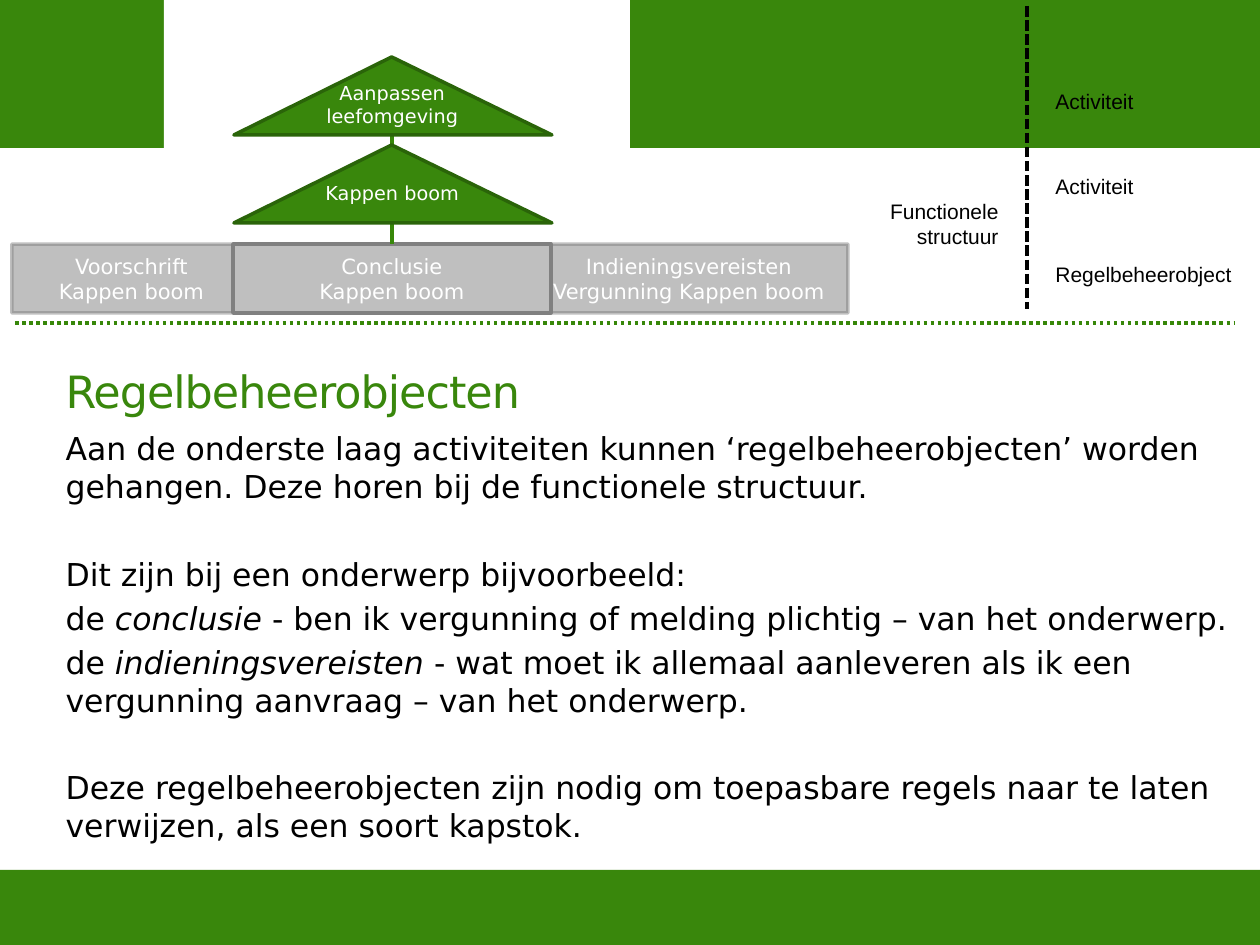
from lxml import etree
from pptx import Presentation
from pptx import util as u
from pptx.dml.color import RGBColor
from pptx.enum import dml, shapes, text
from pptx.oxml.ns import qn

GREEN = RGBColor(0x39, 0x87, 0x0C)
LINE_GREEN = RGBColor(0x37, 0x87, 0x09)
DARK_GREEN = RGBColor(0x2A, 0x64, 0x09)
LIGHT_GREY = RGBColor(0xBF, 0xBF, 0xBF)
GREY = RGBColor(0x80, 0x80, 0x80)
WHITE = RGBColor(0xFF, 0xFF, 0xFF)
BLACK = RGBColor(0, 0, 0)

SANS, ARIAL = "DejaVu Sans", "Arial"
ALIGN, ANCHOR = text.PP_ALIGN, text.MSO_ANCHOR
KINDS = shapes.MSO_SHAPE

BODY = [  # space before in points, then (words, italic) runs
    (0, [("Aan de onderste laag activiteiten kunnen ‘regelbeheerobjecten’ worden "
          "gehangen. Deze horen bij de functionele structuur.", False)]),
    (28.5, [("Dit zijn bij een onderwerp bijvoorbeeld:", False)]),
    (3.6, [("de ", False), ("conclusie", True),
           (" - ben ik vergunning of melding plichtig – van het onderwerp.", False)]),
    (3.6, [("de ", False), ("indieningsvereisten", True),
           (" - wat moet ik allemaal aanleveren als ik een vergunning aanvraag"
            " – van het onderwerp.", False)]),
    (28.5, [("Deze regelbeheerobjecten zijn nodig om toepasbare regels naar te laten "
             "verwijzen, als een soort kapstok.", False)]),
]


def px(count):
    return u.Emu(round(count * 914400 / 126))


def place(box, left, top, width, height):
    box.left, box.top, box.width, box.height = map(px, (left, top, width, height))


def add_span(para, words, size, color, font=SANS, italic=False):
    span = para.add_run()
    span.text = words
    span.font.name, span.font.size = font, u.Pt(size)
    span.font.color.rgb = color
    span.font.italic = italic
    return span


def add_lines(frame, lines, size, color, font=SANS, align=ALIGN.LEFT):
    for index, words in enumerate(lines):
        para = frame.paragraphs[0] if index == 0 else frame.add_paragraph()
        para.alignment = align
        add_span(para, words, size, color, font)


def add_block(page, kind, area, fill, line=None, opacity=100):
    box = page.shapes.add_shape(kind, *map(px, area))
    box.shadow.inherit = False
    box.fill.solid()
    box.fill.fore_color.rgb = fill
    if line is None:
        box.line.fill.background()
        return box
    box.line.color.rgb = line
    box.line.width = u.Pt(2)
    if opacity < 100:
        color = box.line._ln.find(".//" + qn("a:srgbClr"))
        etree.SubElement(color, qn("a:alpha")).set("val", str(opacity * 1000))
    return box


def add_object(page, left, width, lines, opacity):
    box = add_block(page, KINDS.RECTANGLE, (left, 244, width, 69), LIGHT_GREY, GREY, opacity)
    box.text_frame.word_wrap = True
    box.text_frame.vertical_anchor = ANCHOR.MIDDLE
    add_lines(box.text_frame, lines, 12, WHITE, align=ALIGN.CENTER)


def add_activity(page, top, words):
    box = add_block(page, KINDS.ISOSCELES_TRIANGLE, (234, top, 318, 78), GREEN, DARK_GREEN)
    box.adjustments[0] = 0.496
    frame = box.text_frame
    frame.word_wrap = True
    frame.vertical_anchor = ANCHOR.MIDDLE
    frame.margin_top, frame.margin_bottom = 0, px(22)
    add_lines(frame, [words], 11, WHITE, align=ALIGN.CENTER)


def add_label(page, area, words, align=ALIGN.LEFT, wrap=False):
    frame = page.shapes.add_textbox(*map(px, area)).text_frame
    frame.word_wrap = wrap
    add_lines(frame, [words], 12, BLACK, ARIAL, align)


def add_line(page, x1, y1, x2, y2, color, dash=None):
    line = page.shapes.add_connector(shapes.MSO_CONNECTOR.STRAIGHT,
                                     *map(px, (x1, y1, x2, y2)))
    line.line.color.rgb = color
    line.line.width = u.Pt(2)
    if dash is not None:
        line.line.dash_style = dash
    etree.SubElement(line._element.spPr, qn("a:effectLst"))


def fill_title(title):
    place(title, 53, 354, 1130, 78)
    frame = title.text_frame
    frame.word_wrap = True
    frame.auto_size = text.MSO_AUTO_SIZE.NONE
    frame.vertical_anchor = ANCHOR.TOP
    frame.margin_top = px(10)
    frame.paragraphs[0].alignment = ALIGN.LEFT
    span = add_span(frame.paragraphs[0], "Regelbeheerobjecten", 25.4, GREEN)
    span.font._element.set("spc", "-60")


def fill_body(body):
    place(body, 53, 423, 1198, 485)
    frame = body.text_frame
    frame.word_wrap = True
    frame.auto_size = text.MSO_AUTO_SIZE.NONE
    for index, (before, spans) in enumerate(BODY):
        para = frame.paragraphs[0] if index == 0 else frame.add_paragraph()
        para.space_before = u.Pt(before)
        props = para._p.get_or_add_pPr()
        props.set("marL", "0")
        props.set("indent", "0")
        etree.SubElement(props, qn("a:buNone"))
        for words, italic in spans:
            add_span(para, words, 18, BLACK, italic=italic)


def main():
    deck = Presentation()
    deck.slide_width, deck.slide_height = px(1260), px(945)
    page = deck.slides.add_slide(deck.slide_layouts[1])

    # Green bands and the white gap behind the tree
    add_block(page, KINDS.RECTANGLE, (0, 870, 1260, 75), GREEN)
    add_block(page, KINDS.RECTANGLE, (0, 0, 1260, 148), GREEN)
    add_block(page, KINDS.RECTANGLE, (164, 0, 466, 169), WHITE)

    # Title and body
    fill_title(page.shapes.title)
    fill_body(page.placeholders[1])

    # Rule management objects at the foot of the tree
    add_object(page, 12, 239, ["Voorschrift", "Kappen boom"], 50)
    add_object(page, 530, 318, ["Indieningsvereisten", "Vergunning Kappen boom"], 50)
    add_object(page, 233, 318, ["Conclusie", "Kappen boom"], 100)

    # Activities and the trunk between them
    add_line(page, 392, 135, 392, 145, LINE_GREEN)
    add_line(page, 392, 224, 392, 244, LINE_GREEN)
    add_activity(page, 57, "Aanpassen leefomgeving")
    add_activity(page, 145, "Kappen boom")

    # Legend and dividers
    add_line(page, 1027, 6, 1027, 309, BLACK, dml.MSO_LINE.SQUARE_DOT)
    add_line(page, 15, 323, 1235, 323, LINE_GREEN, dml.MSO_LINE.ROUND_DOT)
    add_label(page, (1043, 82, 105, 38), "Activiteit")
    add_label(page, (1043, 167, 105, 38), "Activiteit")
    add_label(page, (1043, 255, 208, 38), "Regelbeheerobject")
    add_label(page, (848, 192, 163, 63), "Functionele structuur", ALIGN.RIGHT, True)

    deck.save("out.pptx")


if __name__ == "__main__":
    main()
